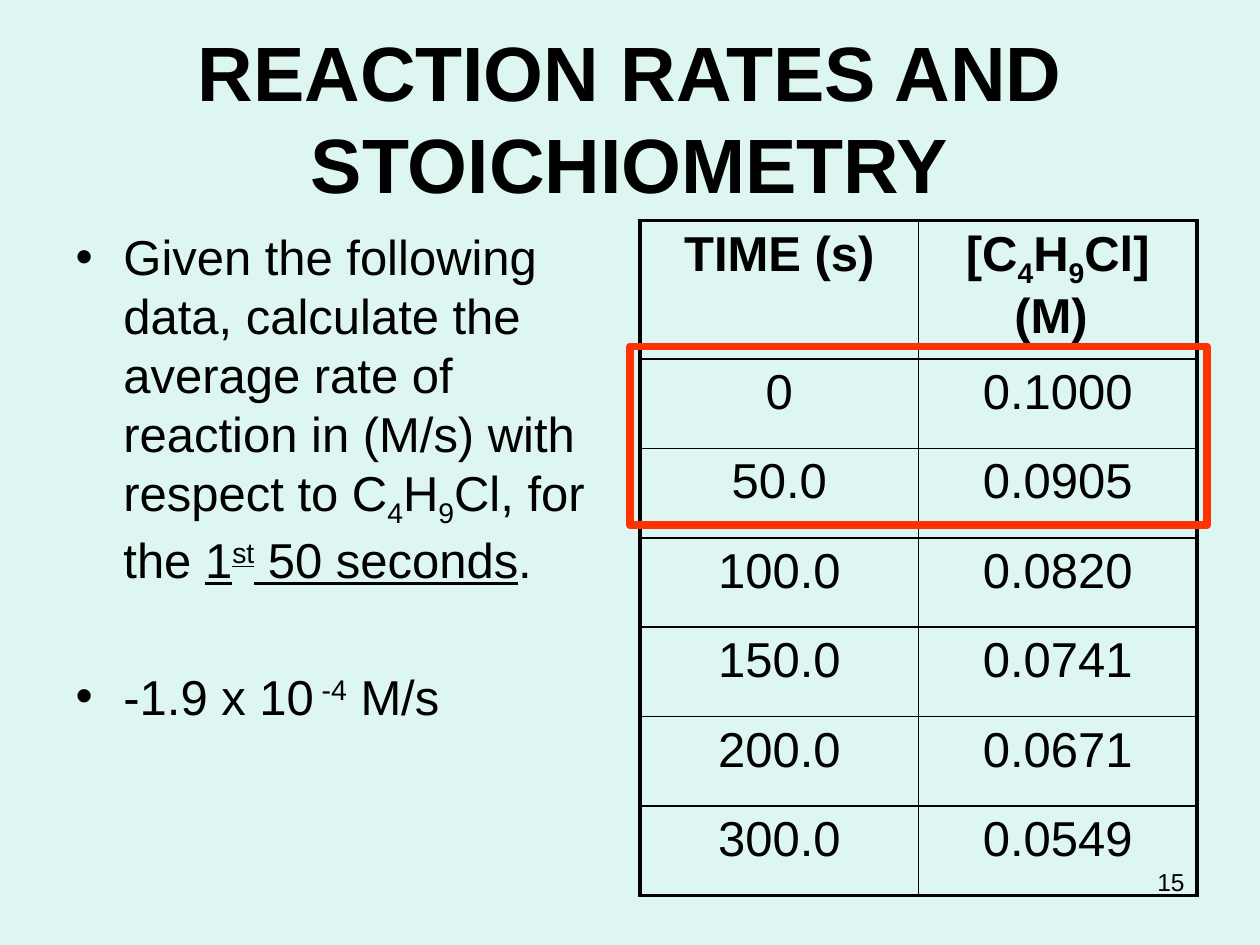
from lxml import etree
from pptx import Presentation
from pptx.dml.color import RGBColor
from pptx.enum.shapes import MSO_SHAPE
from pptx.enum.text import MSO_ANCHOR, MSO_AUTO_SIZE, PP_ALIGN
from pptx.oxml.ns import qn
from pptx.util import Inches, Pt

LEFT, CENTER, RIGHT = PP_ALIGN.LEFT, PP_ALIGN.CENTER, PP_ALIGN.RIGHT
RECT = MSO_SHAPE.RECTANGLE
MINT = RGBColor(0xDE, 0xF6, 0xF1)
BLACK = RGBColor(0, 0, 0)
RED = RGBColor(0xFF, 0x33, 0x00)
SUB, SUP = -25, 30

# A run is (text, format); a plain string is an unformatted run.
TITLE = ["REACTION RATES AND STOICHIOMETRY"]
LINE = {"underline": True}
POINTS = [
    (5.6, ["Given the following data, calculate the average rate of reaction "
           "in (M/s) with respect to C", ("4", {"shift": SUB}), "H",
           ("9", {"shift": SUB}), "Cl, for the ", ("1", LINE),
           ("st", {"shift": SUP, **LINE}), (" 50 seconds", LINE), "."]),
    (45, ["-1.9 x 10", (" -4", {"shift": SUP}), " M/s"]),
]
HEAD = [["TIME (s)"],
        ["[C", ("4", {"shift": SUB}), "H", ("9", {"shift": SUB}), "Cl] (M) "]]
DATA = [("0", "0.1000"), ("50.0", "0.0905"), ("100.0", "0.0820"),
        ("150.0", "0.0741"), ("200.0", "0.0671"), ("300.0", "0.0549")]
PAGE = ["15"]

TOP, WIDE = 1.75, 4.42
HEAD_H, ROW_H = 1.03, 0.71
THICK, THIN = 2.25, 1


def box(*nums):
    return [Inches(n) for n in nums]


def place(shape, *nums):
    shape.left, shape.top, shape.width, shape.height = box(*nums)


def write(para, runs, align=LEFT, before=0, **base):
    para.alignment = align
    para.space_before = Pt(before)
    for item in runs:
        text, extra = (item, {}) if isinstance(item, str) else item
        look = {"name": "Arial", "size": Pt(28), "bold": False, **base, **extra}
        shift = look.pop("shift", 0)
        run = para.add_run()
        run.text = text
        for key, value in look.items():
            setattr(run.font, key, value)
        run.font.color.rgb = BLACK
        if shift:
            run._r.get_or_add_rPr().set("baseline", str(shift * 1000))


def bullet(para):
    props = para._p.get_or_add_pPr()
    props.set("marL", str(Inches(0.38)))
    props.set("indent", str(-Inches(0.38)))
    etree.SubElement(props, qn("a:buFont"), typeface="Arial")
    etree.SubElement(props, qn("a:buChar"), char="•")


def border(cell, widths):
    """Draw black cell edges; widths are points in L, R, T, B order."""
    props = cell._tc.get_or_add_tcPr()
    for spot, (side, width) in enumerate(zip("LRTB", widths)):
        edge = etree.Element(qn("a:ln" + side), w=str(Pt(width)))
        fill = etree.SubElement(edge, qn("a:solidFill"))
        etree.SubElement(fill, qn("a:srgbClr"), val=str(BLACK))
        props.insert(spot, edge)


def add_grid(slide):
    rows = [HEAD] + [[[text] for text in row] for row in DATA]
    last, end = len(rows) - 1, len(HEAD) - 1
    tall = HEAD_H + ROW_H * last
    grid = slide.shapes.add_table(
        len(rows), len(HEAD), *box(5.08, TOP, WIDE, tall)).table
    grid.first_row = grid.horz_banding = False
    for col in grid.columns:
        col.width = Inches(WIDE / len(HEAD))
    for r, row in enumerate(rows):
        grid.rows[r].height = Inches(ROW_H if r else HEAD_H)
        for c, runs in enumerate(row):
            cell = grid.cell(r, c)
            cell.fill.background()
            outer = (c == 0, c == end, r == 0, r == last)
            border(cell, [THICK if out else THIN for out in outer])
            write(cell.text_frame.paragraphs[0], runs, CENTER, 5.6, bold=r == 0)


def main():
    deck = Presentation()
    deck.slide_width, deck.slide_height = box(10, 7.5)
    slide = deck.slides.add_slide(deck.slide_layouts[1])
    slide.background.fill.solid()
    slide.background.fill.fore_color.rgb = MINT

    page = slide.shapes.add_textbox(*box(7.17, 6.83, 2.33, 0.52))
    page.text_frame.word_wrap = True
    write(page.text_frame.paragraphs[0], PAGE, RIGHT, size=Pt(14))

    title, body = slide.placeholders
    place(title, 0.5, 0.3, 9, 1.25)
    title.text_frame.vertical_anchor = MSO_ANCHOR.MIDDLE
    write(title.text_frame.paragraphs[0], TITLE, CENTER, size=Pt(44), bold=True)

    place(body, 0.5, TOP, WIDE, 4.95)
    frame = body.text_frame
    for i, (before, runs) in enumerate(POINTS):
        para = frame.add_paragraph() if i else frame.paragraphs[0]
        write(para, runs, before=before)
        bullet(para)
    for shape in (title, body):
        shape.text_frame.auto_size = MSO_AUTO_SIZE.NONE

    add_grid(slide)

    mark = slide.shapes.add_shape(RECT, *box(5, 2.75, 4.58, 1.42))
    mark.shadow.inherit = False
    mark.fill.background()
    mark.line.color.rgb = RED
    mark.line.width = Pt(4.5)

    deck.save("out.pptx")


if __name__ == "__main__":
    main()
